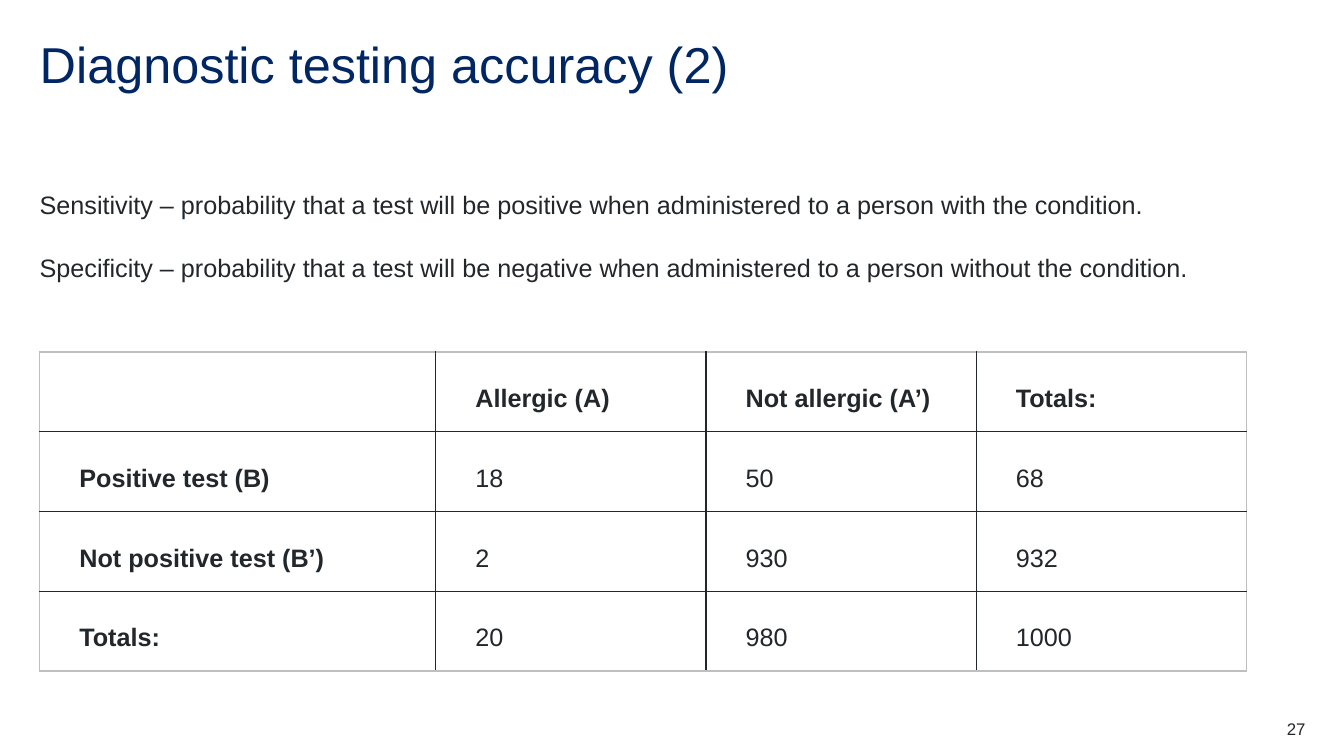
import pptx
import pptx.dml.color
import pptx.enum.text
import pptx.oxml
import pptx.oxml.ns
import pptx.util
from pptx.util import Cm

NAVY, INK, GREY, WHITE = "002664", "22272B", "BFBFBF", "FFFFFF"
ANCHOR = pptx.enum.text.MSO_ANCHOR
ALIGN = pptx.enum.text.PP_ALIGN


def rgb(hex_code):
    return pptx.dml.color.RGBColor.from_string(hex_code)


def write(frame, *lines, size=18, color=INK, bold=False, align=ALIGN.LEFT,
          spacing=1.0, before=0, after=0, anchor=ANCHOR.TOP, margins=(0, 0, 0, 0)):
    """Fill a text frame, one paragraph per line; margins are left, top, right, bottom."""
    frame.word_wrap = True
    frame.vertical_anchor = anchor
    frame.margin_left, frame.margin_top, frame.margin_right, frame.margin_bottom = margins
    for number, line in enumerate(lines):
        paragraph = frame.add_paragraph() if number else frame.paragraphs[0]
        paragraph.alignment = align
        paragraph.line_spacing = spacing
        paragraph.space_before = pptx.util.Pt(before)
        paragraph.space_after = pptx.util.Pt(after)
        run = paragraph.add_run()
        run.text = line
        run.font.name = "Arial"
        run.font.size = pptx.util.Pt(size)
        run.font.bold = bold
        run.font.color.rgb = rgb(color)


presentation = pptx.Presentation()
presentation.slide_width = Cm(33.87)
presentation.slide_height = Cm(19.05)
slide = presentation.slides.add_slide(presentation.slide_layouts[5])

left, content_width = Cm(1), Cm(31.9)

# Title
title = slide.shapes.title
title.left, title.top, title.width, title.height = left, Cm(1), content_width, Cm(1.52)
title.text_frame.auto_size = pptx.enum.text.MSO_AUTO_SIZE.NONE
write(title.text_frame, "Diagnostic testing accuracy (2)", size=36, color=NAVY, spacing=0.9)

# Definitions
definitions = slide.shapes.add_textbox(left, Cm(4.4), content_width, Cm(3.6))
write(
    definitions.text_frame,
    "Sensitivity – probability that a test will be positive when administered"
    " to a person with the condition.",
    "Specificity – probability that a test will be negative when administered"
    " to a person without the condition.",
    spacing=1.5, after=12,
)

# Test results
results = [
    ["", "Allergic (A)", "Not allergic (A’)", "Totals:"],
    ["Positive test (B)", "18", "50", "68"],
    ["Not positive test (B’)", "2", "930", "932"],
    ["Totals:", "20", "980", "1000"],
]
column_widths = [Cm(9.98)] + [Cm(6.81)] * 3
row_height = Cm(2.01)
last = len(results) - 1
table = slide.shapes.add_table(
    len(results), len(column_widths), left, Cm(8.87),
    sum(column_widths), row_height * len(results),
).table
table.first_row = table.horz_banding = False
for column, width in zip(table.columns, column_widths):
    column.width = width

for r, row in enumerate(results):
    table.rows[r].height = row_height
    for c, value in enumerate(row):
        cell = table.cell(r, c)
        cell.vertical_anchor = ANCHOR.MIDDLE
        cell.margin_left, cell.margin_right = Cm(1), Cm(0.18)
        cell.margin_top = cell.margin_bottom = 0
        outer_edges = {"lnL": c == 0, "lnR": c == last, "lnT": r == 0, "lnB": r == last}
        for edge, is_outer in outer_edges.items():
            cell.fill._xPr.append(pptx.oxml.parse_xml(
                f'<a:{edge} {pptx.oxml.ns.nsdecls("a")} w="12700"><a:solidFill>'
                f'<a:srgbClr val="{GREY if is_outer else INK}"/></a:solidFill></a:{edge}>'
            ))
        cell.fill.solid()
        cell.fill.fore_color.rgb = rgb(WHITE)
        if value:
            write(cell.text_frame, value, bold=r == 0 or c == 0, spacing=1.5,
                  before=12, after=6, anchor=ANCHOR.MIDDLE,
                  margins=(Cm(1), 0, Cm(0.18), 0))

# Slide number
slide_number = slide.shapes.add_textbox(Cm(30.9), Cm(18.1), Cm(2), Cm(0.5))
write(slide_number.text_frame, "27", size=12, align=ALIGN.RIGHT)

presentation.save("out.pptx")
